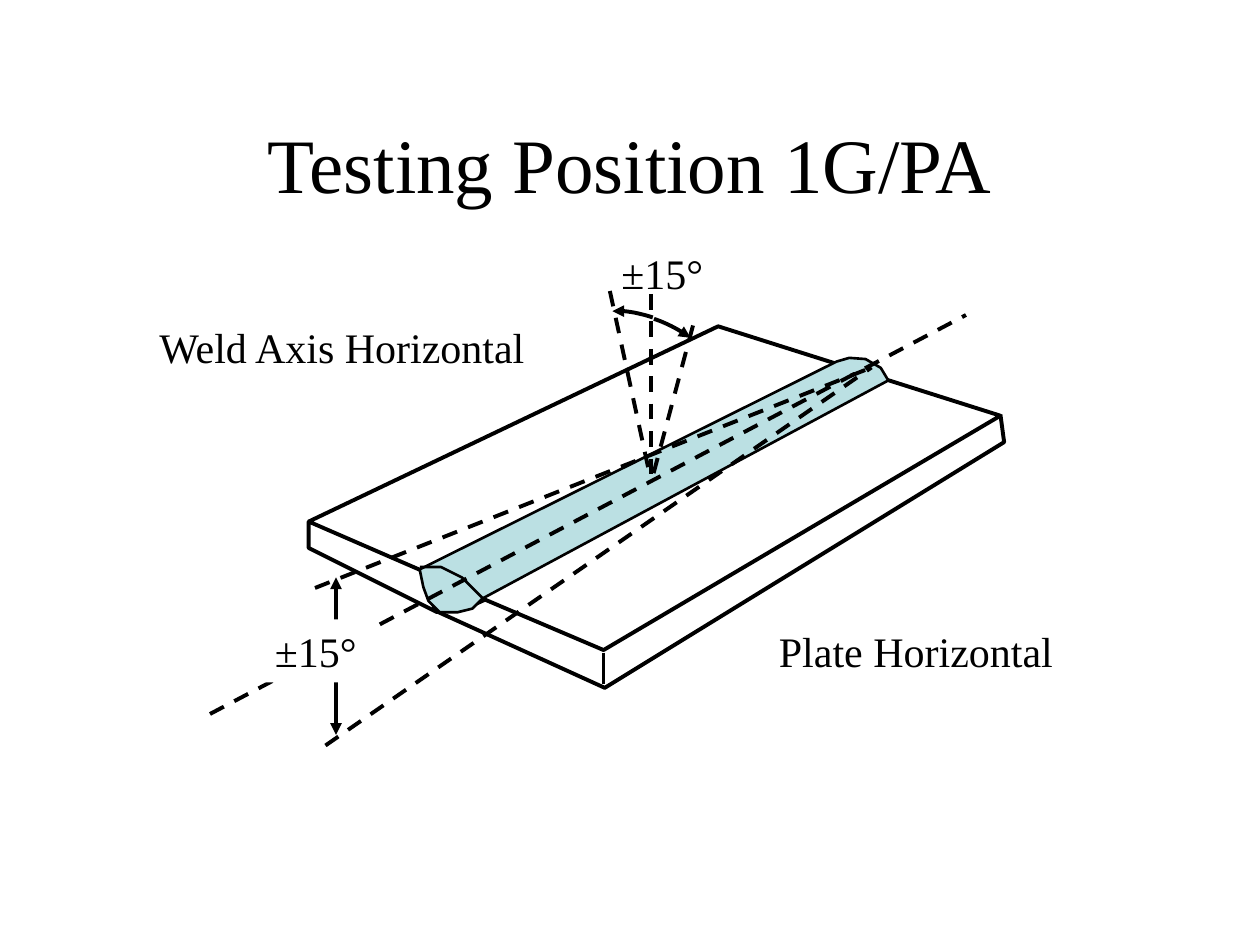
from lxml import etree
from pptx import Presentation
from pptx.dml.color import RGBColor
from pptx.enum.dml import MSO_LINE
from pptx.enum.shapes import MSO_CONNECTOR
from pptx.enum.text import MSO_ANCHOR, PP_ALIGN
from pptx.oxml.ns import qn
from pptx.util import Pt

STRAIGHT = MSO_CONNECTOR.STRAIGHT
DASH = MSO_LINE.DASH
LEFT, CENTER = PP_ALIGN.LEFT, PP_ALIGN.CENTER
TOP, MIDDLE = MSO_ANCHOR.TOP, MSO_ANCHOR.MIDDLE

COLORS = {"ink": "000000", "paper": "FFFFFF", "weld": "BBE0E3"}
FONT = "Times New Roman"
THICK, THIN = 2.25, 1.5

# Outlines, in points
PLATE = [(571.7, 236.9), (573.8, 252.7), (345.6, 393.1), (249.1, 349.2),
         (267.8, 347), (277.2, 342.7), (344.9, 371.5), (571.7, 237.6),
         (410.4, 186.5), (176.4, 298.1), (241.2, 326.2), (243.4, 337.7),
         (249.8, 349.9), (176.4, 313.2), (176.4, 298.1)]
WELD = [(478.1, 206.6), (485.3, 204.5), (494.6, 205.2), (503.3, 210.2),
        (507.6, 217.4), (275.8, 342), (270, 347.8), (261.4, 349.9),
        (251.3, 349.9), (244.8, 343.4), (241.9, 335.5), (239.8, 325.4)]
WELD_END = [(240, 324), (252, 324), (264, 330), (270, 336), (276, 342)]

# Dashed lines, each as start and end
AXIS_LINES = [((186, 426), (498, 210)), ((180, 336), (498, 210)),
              ((120, 408), (552, 180))]
TILT_LINES = [((372, 168), (372, 276)), ((348.5, 166.3), (371.5, 272.2)),
              ((396, 186), (372, 276))]

# Bezier control points of the two halves of the tilt arrow
TILT_ARCS = [[(373.7, 182.2), (382.3, 185), (389.5, 189.4), (394.6, 193)],
             [(373, 181.4), (364.3, 178.6), (355.7, 177.1), (349.9, 177.8)]]


def color(name):
    return RGBColor.from_string(COLORS[name])


def style_line(shape, width, dash=None, arrows=()):
    """Set an ink line; arrows names its ends, headEnd before tailEnd."""
    line = shape.line
    line.color.rgb = color("ink")
    for name, value in {"width": Pt(width), "dash_style": dash}.items():
        if value is not None:
            setattr(line, name, value)
    properties = shape._element.spPr
    for end in arrows:
        etree.SubElement(properties.find(qn("a:ln")), qn(f"a:{end}"),
                         type="triangle")


def add_line(slide, start, end, width=THICK, dash=None, arrows=()):
    connector = slide.shapes.add_connector(
        STRAIGHT, *(Pt(value) for value in (*start, *end)))
    style_line(connector, width, dash, arrows)
    etree.SubElement(connector._element.spPr, qn("a:effectLst"))


def add_outline(slide, points, width, fill=None, close=False, arrows=()):
    corners = [(Pt(x), Pt(y)) for x, y in points]
    builder = slide.shapes.build_freeform(*corners[0])
    builder.add_line_segments(corners[1:], close=close)
    shape = builder.convert_to_shape()
    shape.shadow.inherit = False
    if fill:
        shape.fill.solid()
        shape.fill.fore_color.rgb = color(fill)
    else:
        shape.fill.background()
    style_line(shape, width, arrows=arrows)


def curve_points(controls, steps=12):
    """Sample a cubic Bezier curve at equal steps."""
    points = []
    for step in range(steps + 1):
        t = step / steps
        weights = ((1 - t) ** 3, 3 * t * (1 - t) ** 2,
                   3 * t ** 2 * (1 - t), t ** 3)
        points.append(tuple(sum(weight * value
                                for weight, value in zip(weights, axis))
                            for axis in zip(*controls)))
    return points


def add_text(slide, text, box, size=24, align=LEFT, anchor=TOP, fill=None):
    shape = slide.shapes.add_textbox(*(Pt(value) for value in box))
    if fill:
        shape.fill.solid()
        shape.fill.fore_color.rgb = color(fill)
    frame = shape.text_frame
    for name, value in {"word_wrap": True, "vertical_anchor": anchor}.items():
        setattr(frame, name, value)
    paragraph = frame.paragraphs[0]
    paragraph.alignment = align
    run = paragraph.add_run()
    run.text = text
    for name, value in {"name": FONT, "size": Pt(size)}.items():
        setattr(run.font, name, value)
    run.font.color.rgb = color("ink")


def main():
    presentation = Presentation()
    presentation.slide_width, presentation.slide_height = Pt(720), Pt(540)
    slide = presentation.slides.add_slide(presentation.slide_layouts[6])

    add_text(slide, "Testing Position 1G/PA", (54, 48, 612, 90),
             size=44, align=CENTER, anchor=MIDDLE)

    # Plate and weld, with the arrow for the axis angle
    add_line(slide, (192, 330), (192, 420), arrows=("headEnd", "tailEnd"))
    add_outline(slide, PLATE, THICK)
    add_line(slide, (344.9, 373), (344.9, 391), THIN)
    add_outline(slide, WELD, THIN, fill="weld", close=True)
    add_outline(slide, WELD_END, THIN)

    # Weld axis and its limits; the label covers part of them
    for start, end in AXIS_LINES:
        add_line(slide, start, end, dash=DASH)
    add_text(slide, "±15°", (150, 354, 66, 36), fill="paper")
    add_text(slide, "Weld Axis Horizontal", (84, 180, 240, 36))
    add_text(slide, "Plate Horizontal", (438, 354, 240, 36))

    # Tilt about the vertical
    for start, end in TILT_LINES:
        add_line(slide, start, end, dash=DASH)
    add_text(slide, "±15°", (348, 138, 66, 36))
    for controls in TILT_ARCS:
        add_outline(slide, curve_points(controls), THICK, arrows=("tailEnd",))

    presentation.save("out.pptx")


if __name__ == "__main__":
    main()
